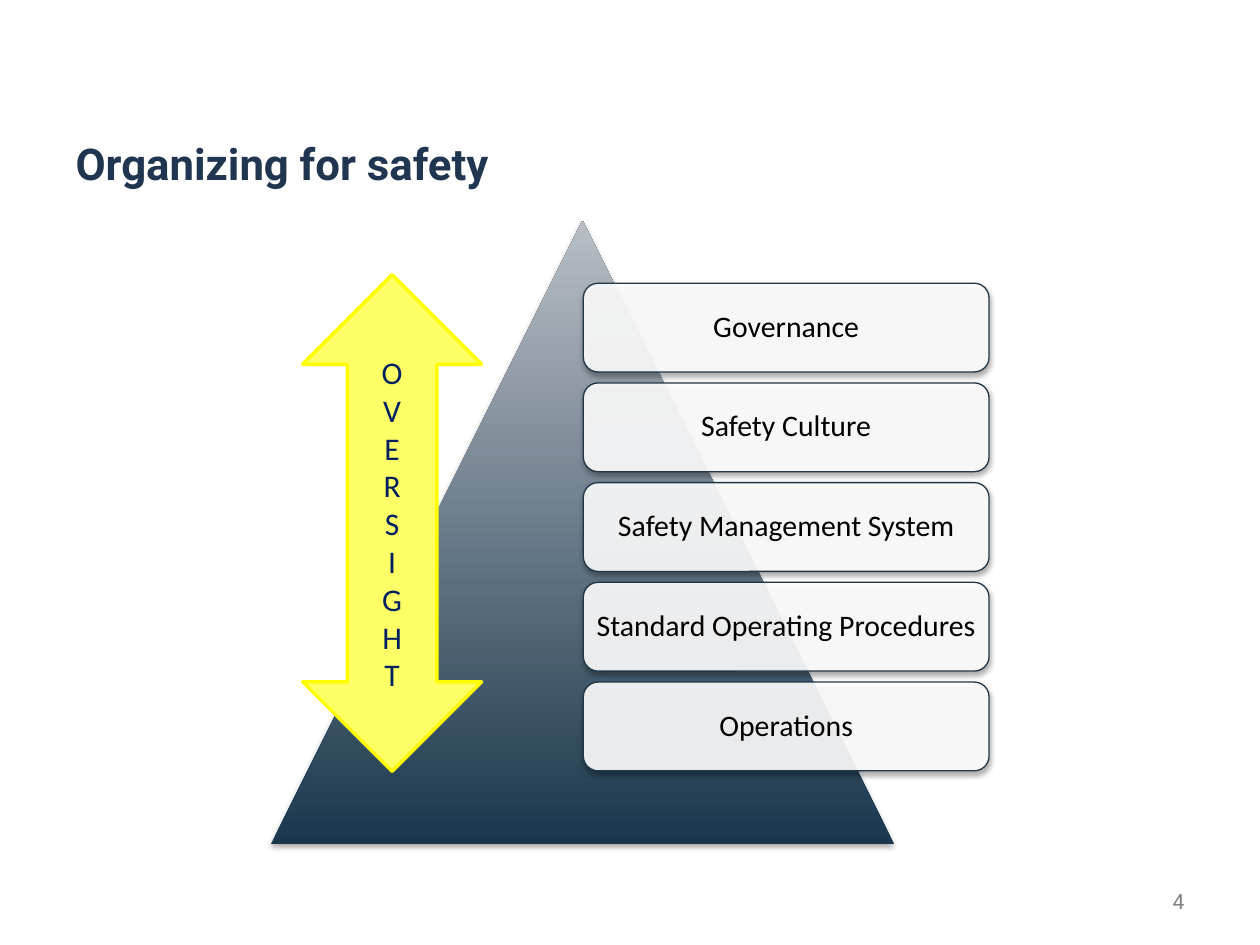
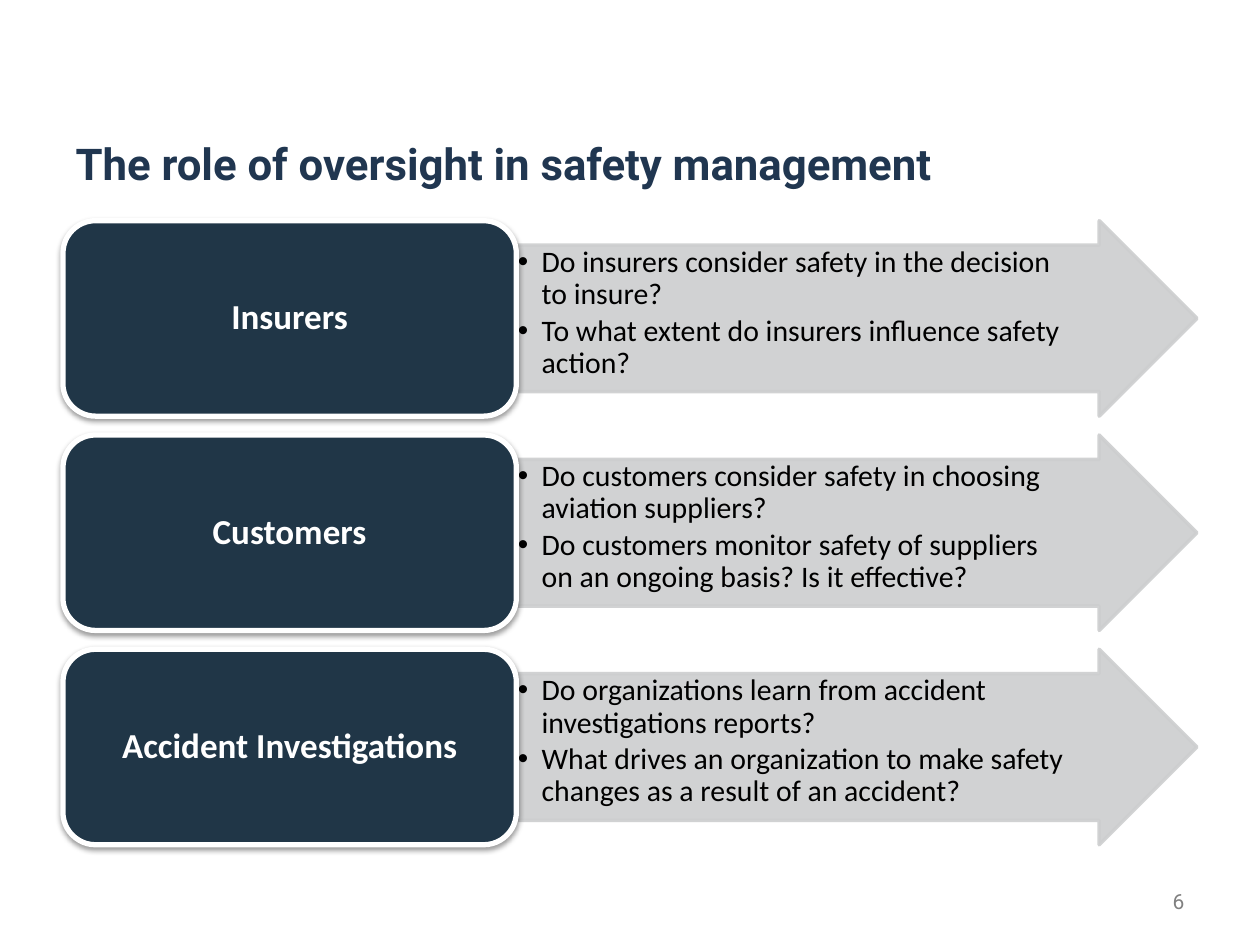
from lxml.etree import SubElement
from pptx import Presentation
from pptx.dml.color import RGBColor
from pptx.enum.shapes import MSO_SHAPE
from pptx.enum.text import MSO_ANCHOR, MSO_AUTO_SIZE, PP_ALIGN
from pptx.oxml.ns import qn
from pptx.util import Cm, Pt

HUES = {
    "title": "203650",
    "navy": "203647",
    "deep": "1A374D",
    "mist": "B9BEC5",
    "white": "FFFFFF",
    "black": "000000",
    "grey": "808080",
    "silver": "CDCECF",
    "lemon": "FFFF66",
    "yellow": "FFFF00",
    "ink": "002060",
}
LAYERS = ["Governance", "Safety Culture", "Safety Management System",
          "Standard Operating Procedures", "Operations"]
ROLES = {
    "Insurers": [
        "Do insurers consider safety in the decision to insure?",
        "To what extent do insurers influence safety action?",
    ],
    "Customers": [
        "Do customers consider safety in choosing aviation suppliers?",
        "Do customers monitor safety of suppliers on an ongoing basis? Is it effective?",
    ],
    "Accident Investigations": [
        "Do organizations learn from accident investigations reports?",
        "What drives an organization to make safety changes as a result of an accident?",
    ],
}


class Deck:
    head = "Roboto"
    body = "Calibri"

    def __init__(self):
        self.show = Presentation()
        self.show.slide_width = Cm(25.4)
        self.show.slide_height = Cm(19.05)
        self.slide = None

    def hue(self, name):
        return RGBColor.from_string(HUES[name])

    def page(self, title, number, width):
        self.slide = self.show.slides.add_slide(self.show.slide_layouts[5])
        self.note(number)
        box = self.slide.shapes.title
        box.left, box.top, box.width, box.height = Cm(1.27), Cm(1.78), Cm(width), Cm(2.16)
        self.label(box, [title], 25, "title", font=self.head, bold=True,
                   align=PP_ALIGN.LEFT, anchor=MSO_ANCHOR.BOTTOM)

    def note(self, number):
        box = self.slide.shapes.add_textbox(Cm(18.21), Cm(17.65), Cm(5.92), Cm(1.02))
        self.label(box, [number], 12, "grey", font=self.head, align=PP_ALIGN.RIGHT)

    def label(self, shape, lines, size, hue, font=body, bold=False,
              align=PP_ALIGN.CENTER, anchor=MSO_ANCHOR.MIDDLE,
              pads=None, pitch=1.0, after=0, bullet=False):
        frame = shape.text_frame
        frame.text = "\n".join(lines)
        frame.word_wrap = True
        frame.auto_size = MSO_AUTO_SIZE.NONE
        frame.vertical_anchor = anchor
        if pads:
            (frame.margin_left, frame.margin_top,
             frame.margin_right, frame.margin_bottom) = map(Cm, pads)
        for para in frame.paragraphs:
            if bullet:
                self.dot(para)
            para.alignment = align
            para.line_spacing = pitch
            para.space_after = Pt(after)
            for run in para.runs:
                run.font.name = font
                run.font.size = Pt(size)
                run.font.bold = bold
                run.font.color.rgb = self.hue(hue)

    def dot(self, para):
        props = para._p.get_or_add_pPr()
        props.set("marL", str(Cm(0.48)))
        props.set("indent", str(-Cm(0.48)))
        SubElement(props, qn("a:buFont"), typeface="Arial")
        SubElement(props, qn("a:buChar"), char="•")

    def shape(self, kind, left, top, width, height, fill=None, line=None, weight=1):
        item = self.slide.shapes.add_shape(kind, Cm(left), Cm(top), Cm(width), Cm(height))
        item.shadow.inherit = False
        if fill:
            item.fill.solid()
            item.fill.fore_color.rgb = self.hue(fill)
        if line:
            item.line.color.rgb = self.hue(line)
            item.line.width = Pt(weight)
        else:
            item.line.fill.background()
        return item

    def shade(self, item, alpha, drop):
        effects = item._element.spPr.find(qn("a:effectLst"))
        shadow = SubElement(effects, qn("a:outerShdw"), blurRad=str(Pt(3.1)),
                            dist=str(Pt(drop)), dir="5400000", rotWithShape="0")
        color = SubElement(shadow, qn("a:srgbClr"), val=HUES["black"])
        SubElement(color, qn("a:alpha"), val=str(alpha * 1000))

    def fade(self, item, percent):
        props = item._element.spPr
        for fill in props.iter(qn("a:solidFill")):
            color = fill.find(qn("a:srgbClr"))
            SubElement(color, qn("a:alpha"), val=str(percent * 1000))

    def peak(self, left, top, side):
        item = self.shape(MSO_SHAPE.ISOSCELES_TRIANGLE, left, top, side, side)
        item.fill.gradient()
        item.fill.gradient_angle = 90
        for stop, name, place in zip(item.fill.gradient_stops, ("deep", "mist"), (0, 1)):
            stop.color.rgb = self.hue(name)
            stop.position = place
        self.shade(item, 35, 1.8)

    def card(self, text, top):
        item = self.shape(MSO_SHAPE.ROUNDED_RECTANGLE, 11.76, top, 8.18, 1.79, "white")
        self.fade(item, 90)
        item.line.color.rgb = self.hue("navy")
        item.line.width = Pt(0.75)
        self.shade(item, 35, 1.8)
        self.label(item, [text], 17, "black", pads=[0.18] * 4, pitch=0.9)

    def span(self, word):
        item = self.shape(MSO_SHAPE.UP_DOWN_ARROW, 6.1, 5.54, 3.61, 10.01,
                          "lemon", "yellow", 2)
        self.label(item, word, 18, "ink")

    def role(self, name, points, top):
        high = 3.94
        arrow = self.shape(MSO_SHAPE.RIGHT_ARROW, 10.41, top, 13.72, high,
                           "silver", "silver", 2)
        arrow.adjustments[0] = 0.75
        arrow.adjustments[1] = 0.5
        self.fade(arrow, 90)
        self.label(arrow, points, 17, "black", align=PP_ALIGN.LEFT, anchor=MSO_ANCHOR.TOP,
                   pads=[0.03, 0.03, 1.01, 0.03], pitch=0.9, after=2.6, bullet=True)
        block = self.shape(MSO_SHAPE.ROUNDED_RECTANGLE, 1.27, top, 9.14, high,
                           "navy", "white", 3)
        self.shade(block, 38, 1.6)
        self.label(block, [name], 20, "white", bold=True,
                   pads=[0.2, 0.1, 0.2, 0.1], pitch=0.9)


def main():
    deck = Deck()
    deck.page("Organizing for safety", "4", 18.44)
    deck.peak(5.46, 4.45, 12.57)
    for row, layer in enumerate(LAYERS):
        deck.card(layer, 5.71 + row * 2.01)
    deck.span("OVERSIGHT")

    deck.page("The role of oversight in safety management", "6", 21.84)
    for row, (name, points) in enumerate(ROLES.items()):
        deck.role(name, points, 4.45 + row * 4.32)
    deck.show.save("out.pptx")


if __name__ == "__main__":
    main()
